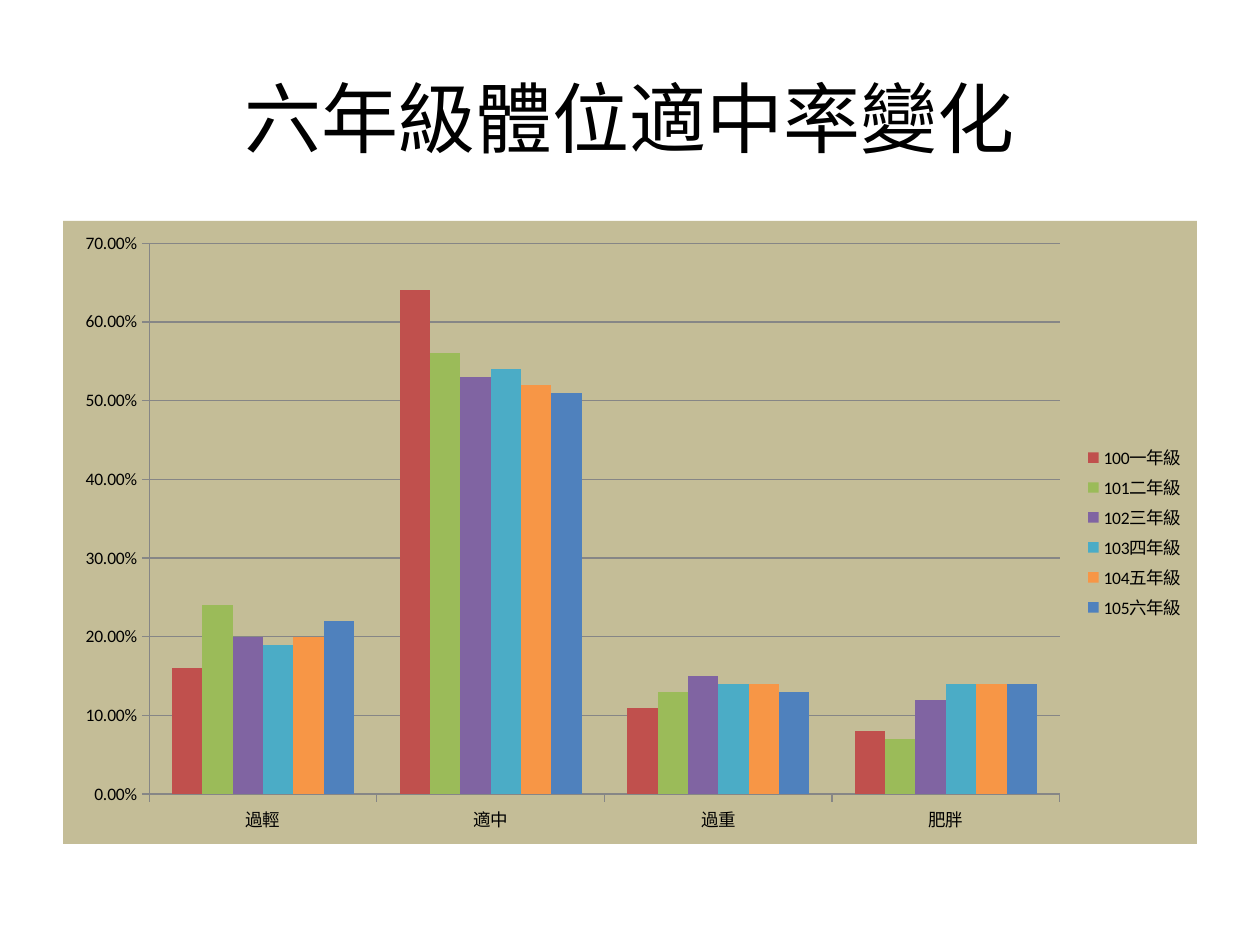
from lxml import etree
from pptx import Presentation, util as u
from pptx.chart.data import CategoryChartData
from pptx.dml.color import RGBColor
from pptx.enum import chart as ch, text
from pptx.oxml.ns import qn

PX = 914400 / 126
FONT = "Calibri"
COLOURS = {"ink": "000000", "panel": "C4BD97", "rule": "868686"}
WEIGHT_GROUPS = ["過輕", "適中", "過重", "肥胖"]
YEARS = [
    ("100一年級", "C0504D", (0.16, 0.64, 0.11, 0.08)),
    ("101二年級", "9BBB59", (0.24, 0.56, 0.13, 0.07)),
    ("102三年級", "8064A2", (0.2, 0.53, 0.15, 0.12)),
    ("103四年級", "4BACC6", (0.19, 0.54, 0.14, 0.14)),
    ("104五年級", "F79646", (0.2, 0.52, 0.14, 0.14)),
    ("105六年級", "4F81BD", (0.22, 0.51, 0.13, 0.14)),
]


def emu(*lengths):
    """Turn px lengths into EMU."""
    return [u.Emu(round(length * PX)) for length in lengths]


def set_all(target, **values):
    """Set each named attribute on the target."""
    for name, value in values.items():
        setattr(target, name, value)


def style_font(font, size):
    """Give a font the slide's face and ink at a size in points."""
    set_all(font, name=FONT, size=u.Pt(size))
    font.color.rgb = RGBColor.from_string(COLOURS["ink"])


def fill_panel(chart):
    """Fill the whole chart area with the panel colour."""
    panel = etree.Element(qn("c:spPr"))
    solid = etree.SubElement(panel, qn("a:solidFill"))
    etree.SubElement(solid, qn("a:srgbClr"), val=COLOURS["panel"])
    outline = etree.SubElement(panel, qn("a:ln"))
    etree.SubElement(outline, qn("a:noFill"))
    chart.element.find(qn("c:chart")).addnext(panel)


def rule_line(line):
    """Draw an axis or grid line in the rule colour."""
    line.color.rgb = RGBColor.from_string(COLOURS["rule"])
    line.width = u.Pt(0.75)


def add_heading(slide, box):
    """Place the slide title in its box."""
    heading = slide.shapes.title
    set_all(heading, **dict(zip(("left", "top", "width", "height"), emu(*box))))
    frame = heading.text_frame
    set_all(frame, text="六年級體位適中率變化", word_wrap=True,
            vertical_anchor=text.MSO_ANCHOR.MIDDLE)
    title_line = frame.paragraphs[0]
    title_line.alignment = text.PP_ALIGN.CENTER
    style_font(title_line.runs[0].font, 44)


def add_rate_chart(slide, box):
    """Place the column chart of weight groups by school year in its box."""
    rates = CategoryChartData(number_format="0.00%")
    rates.categories = WEIGHT_GROUPS
    for year, _, shares in YEARS:
        rates.add_series(year, shares)
    chart = slide.shapes.add_chart(
        ch.XL_CHART_TYPE.COLUMN_CLUSTERED, *emu(*box), rates).chart
    set_all(chart, has_title=False, has_legend=True)
    style_font(chart.font, 10)
    fill_panel(chart)
    set_all(chart.legend, position=ch.XL_LEGEND_POSITION.RIGHT,
            include_in_layout=False)

    columns = chart.plots[0]
    set_all(columns, gap_width=150, overlap=0, vary_by_categories=False)
    for series, (_, colour, _) in zip(columns.series, YEARS):
        series.format.fill.solid()
        series.format.fill.fore_color.rgb = RGBColor.from_string(colour)

    for axis in (chart.category_axis, chart.value_axis):
        set_all(axis, major_tick_mark=ch.XL_TICK_MARK.OUTSIDE,
                minor_tick_mark=ch.XL_TICK_MARK.NONE)
        rule_line(axis.format.line)
    share_axis = chart.value_axis
    set_all(share_axis, minimum_scale=0, maximum_scale=0.7, major_unit=0.1,
            has_major_gridlines=True)
    set_all(share_axis.tick_labels, number_format="0.00%",
            number_format_is_linked=False)
    rule_line(share_axis.major_gridlines.format.line)


def main():
    """Build and save the slide."""
    deck = Presentation()
    deck.slide_width, deck.slide_height = emu(1260, 945)
    slide = deck.slides.add_slide(deck.slide_layouts[5])
    add_heading(slide, (63, 38, 1134, 158))
    add_rate_chart(slide, (63, 221, 1134, 623))
    deck.save("out.pptx")


if __name__ == "__main__":
    main()
